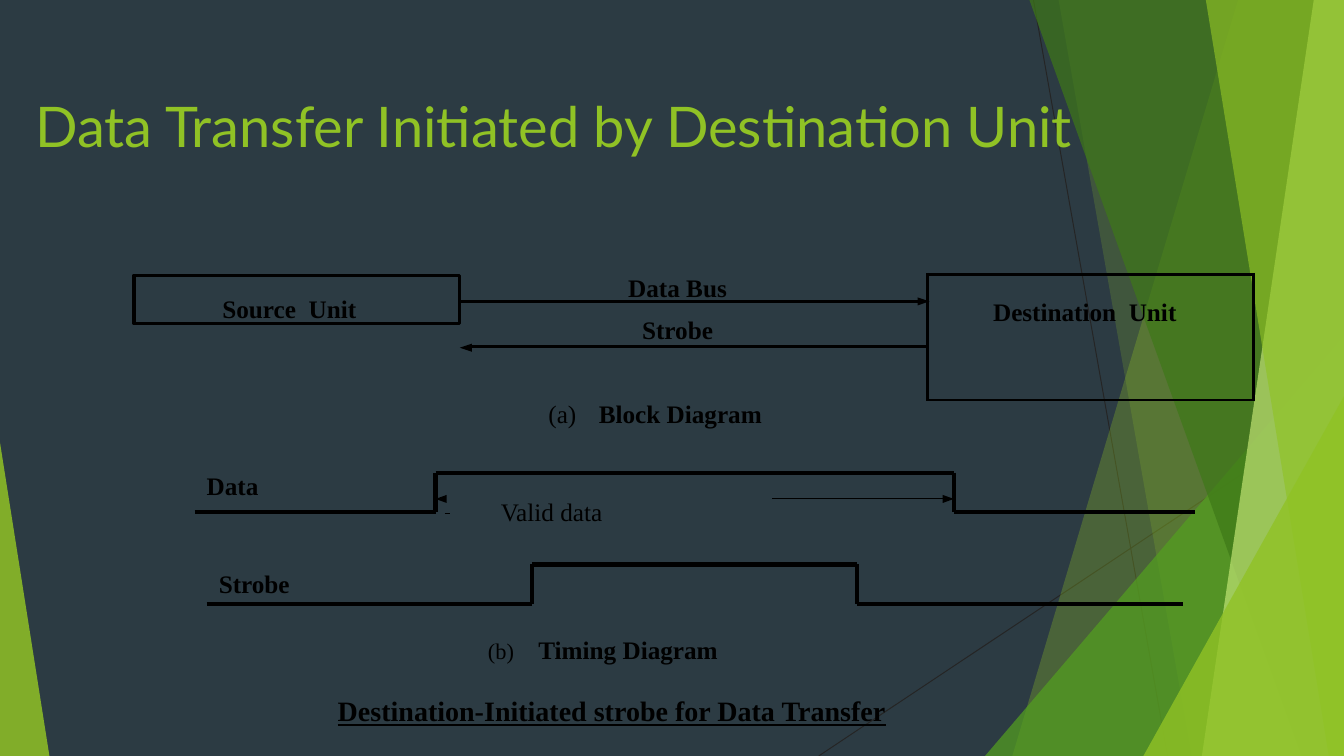
"""Build the slide on data transfer initiated by the destination unit."""
from itertools import pairwise

from lxml.etree import SubElement
from pptx import Presentation
from pptx.dml.color import RGBColor
from pptx.enum.shapes import MSO_CONNECTOR, MSO_SHAPE
from pptx.enum.text import MSO_ANCHOR, PP_ALIGN
from pptx.oxml import parse_xml
from pptx.oxml.ns import nsdecls, qn
from pptx.util import Inches, Pt

W, H = 13.33, 7.5
BLACK = RGBColor(0x00, 0x00, 0x00)
SLATE = RGBColor(0x2C, 0x3B, 0x43)
GUIDE = RGBColor(0x25, 0x25, 0x25)
LIME = RGBColor(0x90, 0xC2, 0x25)
GREEN = RGBColor(0x53, 0x9F, 0x20)
FOREST = RGBColor(0x3E, 0x78, 0x18)
PALE = RGBColor(0xC0, 0xE3, 0x74)

prs = Presentation()
prs.slide_width, prs.slide_height = Inches(W), Inches(H)
s = prs.slides.add_slide(prs.slide_layouts[5])
bg = prs.slide_master.background.fill
bg.solid()
bg.fore_color.rgb = SLATE


def write(p, text, size=18, bold=False, underline=None, font="Times New Roman",
          color=BLACK, baseline=None, align=None, before=None, spacing=None,
          left=None, tab=None):
    """Add a run to a paragraph and format both."""
    r = p.add_run()
    r.text = text
    r.font.size, r.font.bold, r.font.underline = Pt(size), bold, underline
    r.font.name, r.font.color.rgb = font, color
    if baseline:
        r.font._element.set("baseline", str(baseline * 1000))
    if align is not None:
        p.alignment = align
    if before is not None:
        p.space_before = Pt(before)
    if spacing is not None:
        p.line_spacing = spacing
    pPr = p._p.get_or_add_pPr()
    if left is not None:
        pPr.set("marL", str(Inches(left)))
        pPr.set("indent", "0")
    if tab is not None:
        tabs = SubElement(pPr, qn("a:tabLst"))
        SubElement(tabs, qn("a:tab"), pos=str(Inches(tab)), algn="l")


def outline(points, color, opacity=100):
    """Draw a filled polygon without a line."""
    pts = [(Inches(x), Inches(y)) for x, y in points]
    fb = s.shapes.build_freeform(*pts[0])
    fb.add_line_segments(pts[1:], close=True)
    sp = fb.convert_to_shape()
    sp.shadow.inherit = False
    sp.fill.solid()
    sp.fill.fore_color.rgb = color
    sp.line.fill.background()
    if opacity < 100:
        clr = sp.fill._xPr.find(".//" + qn("a:srgbClr"))
        SubElement(clr, qn("a:alpha"), val=str(opacity * 1000))
    return sp


lines = [
    ((10.25, 0), (11.58, H), 0.72, GUIDE),
    ((W, 4.03), (8.12, H), 0.72, GUIDE),
    ((4.56, 2.99), (9.1, 2.99), 2.2, BLACK),
    ((7.66, 4.95), (9.35, 4.95), 0.7, BLACK),
]
PULSE = 0.39
for low, (start, rise, fall, end) in [
    (5.08, (1.93, 4.32, 9.46, 11.85)),
    (5.99, (2.05, 5.28, 8.5, 11.73)),
]:
    high = low - PULSE
    wave = [(start, low), (rise, low), (rise, high), (fall, high), (fall, low), (end, low)]
    lines += [(a, b, 3, BLACK) for a, b in pairwise(wave)]

backdrop = []
for (x1, y1), (x2, y2), width, color in lines:
    cn = s.shapes.add_connector(MSO_CONNECTOR.STRAIGHT, Inches(x1), Inches(y1),
                                Inches(x2), Inches(y2))
    cn.line.width, cn.line.color.rgb = Pt(width), color
    SubElement(cn._element.spPr, qn("a:effectLst"))
    if color == GUIDE:
        backdrop.append(cn)

facets = [
    ([(W, 0), (12.28, 0), (10.04, H), (W, H)], LIME, 30),
    ([(W, 0), (10.5, 0), (11.82, H), (W, H)], LIME, 20),
    ([(W, 3.33), (9.77, H), (W, H)], GREEN, 72),
    ([(W, 0), (10.21, 0), (12.91, H), (W, H)], FOREST, 70),
    ([(W, 0), (13.03, 0), (11.92, H), (W, H)], PALE, 70),
    ([(W, 0), (11.96, 0), (13.18, H), (W, H)], LIME, 65),
    ([(W, 3.93), (11.34, H), (W, H)], LIME, 80),
    ([(0, 4.39), (0, H), (0.49, H)], LIME, 85),
]
backdrop += [outline(*facet) for facet in facets]
for i, sp in enumerate(backdrop):
    sp._element.find(".//" + qn("p:cNvPr")).set("id", str(100 + i))
    prs.slide_master.shapes.element.append(sp._element)

for tip, y, back in [(9.22, 2.99, -0.12), (4.56, 3.45, 0.12),
                     (9.46, 4.95, -0.11), (4.32, 4.95, 0.11)]:
    outline([(tip + back, y - 0.04), (tip + back, y + 0.04), (tip, y)], BLACK)

frame = s.shapes.add_table(2, 2, Inches(4.66), Inches(2.72), Inches(7.77), Inches(1.24))
tbl = frame.table
tbl.first_row = tbl.horz_banding = False
for col, width in zip(tbl.columns, (4.54, 3.23)):
    col.width = Inches(width)
for row, height in zip(tbl.rows, (0.72, 0.52)):
    row.height = Inches(height)
tbl.cell(0, 1).merge(tbl.cell(1, 1))
for (row, col), sides in {(0, 0): "RB", (0, 1): "LRTB", (1, 0): "RT", (1, 1): "LRB"}.items():
    cell = tbl.cell(row, col)
    cell.margin_left = cell.margin_right = cell.margin_top = cell.margin_bottom = 0
    cell.fill.background()
    for i, side in enumerate("LRTB"):
        paint = ('<a:solidFill><a:srgbClr val="000000"/></a:solidFill>'
                 if side in sides else "<a:noFill/>")
        cell._tc.get_or_add_tcPr().insert(i, parse_xml(
            f'<a:ln{side} {nsdecls("a")} w="{Pt(2.25)}">{paint}</a:ln{side}>'))

bus = tbl.cell(0, 0)
bus.margin_right = Inches(0.42)
tf = bus.text_frame
write(tf.paragraphs[0], "Data Bus", bold=True, align=PP_ALIGN.CENTER, spacing=Pt(20.6))
write(tf.add_paragraph(), "Strobe", bold=True, align=PP_ALIGN.CENTER, spacing=Pt(18.8),
      before=11.3)
dest = tbl.cell(0, 1)
dest.margin_top = Inches(0.25)
write(dest.text_frame.paragraphs[0], "Destination  Unit", bold=True, left=0.65, before=17.8)

box = s.shapes.add_shape(MSO_SHAPE.RECTANGLE, Inches(1.33), Inches(2.73),
                         Inches(3.23), Inches(0.48))
box.shadow.inherit = False
box.fill.background()
box.line.color.rgb, box.line.width = BLACK, Pt(2.25)
tf = box.text_frame
tf.vertical_anchor = MSO_ANCHOR.TOP
tf.margin_left = tf.margin_bottom = 0
tf.margin_top, tf.margin_right = Inches(0.02), Inches(0.15)
write(tf.paragraphs[0], "Source  Unit", bold=True, align=PP_ALIGN.CENTER, spacing=1.52,
      before=1.8)

BOLD = {"bold": True}
labels = [
    (2.04, 4.66, 0.72, 0.33, [[("Data", BOLD)]]),
    (4.4, 4.79, 3, 0.33, [[(" \t", {"size": 27, "underline": True, "baseline": 29, "tab": 1.16}),
                           (" ", {"size": 18}), ("Valid data", {})]]),
    (2.16, 5.63, 0.98, 0.33, [[("Strobe", BOLD)]]),
    (5.43, 3.94, 3.03, 0.33, [[("(a)\t", {"tab": 0.64}), ("Block Diagram", BOLD)]]),
    (3.34, 6.28, 7.33, 0.95, [
        [("(b)\t", {"size": 16, "left": 1.5, "tab": 2.04}), ("Timing Diagram", BOLD)],
        [("Destination-Initiated strobe for Data Transfer",
          {"size": 20, "bold": True, "underline": True, "before": 21})],
    ]),
]
for x, y, w, h, paragraphs in labels:
    tf = s.shapes.add_textbox(Inches(x), Inches(y), Inches(w), Inches(h)).text_frame
    tf.word_wrap = True
    tf.margin_left = tf.margin_right = tf.margin_bottom = 0
    tf.margin_top = Inches(0.01)
    for i, runs in enumerate(paragraphs):
        p = tf.add_paragraph() if i else tf.paragraphs[0]
        for j, (text, fmt) in enumerate(runs):
            first = {} if j else {"before": 1, "left": 0.01}
            write(p, text, **{**first, **fmt})

title = s.shapes.title
title.left, title.top, title.width, title.height = map(Inches, (0.34, 0.9, 12.81, 0.69))
tf = title.text_frame
tf.vertical_anchor = MSO_ANCHOR.TOP
tf.margin_left = tf.margin_right = tf.margin_bottom = 0
tf.margin_top = Inches(0.01)
write(tf.paragraphs[0], "Data Transfer Initiated by Destination Unit", size=40, font="Lato",
      color=LIME, align=PP_ALIGN.LEFT, before=1, left=0.01)

prs.save("out.pptx")
